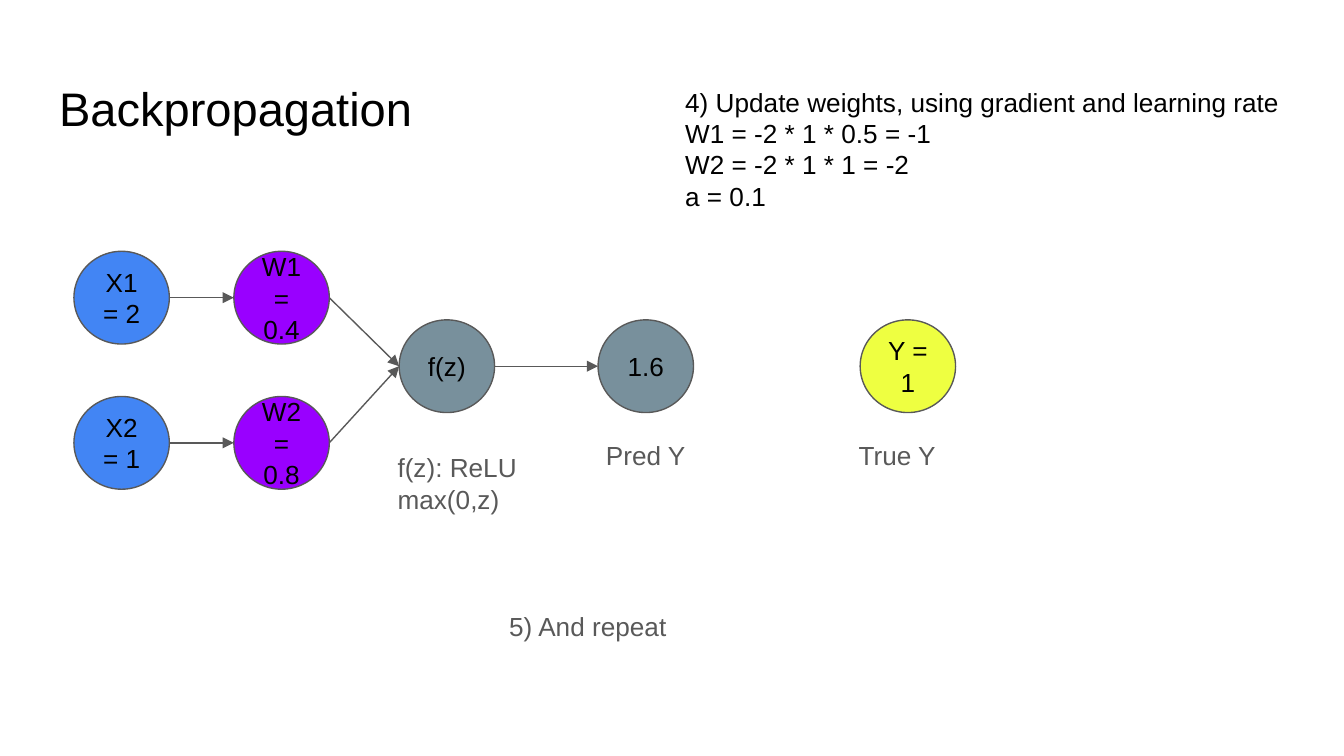
import pptx
import pptx.util
import pptx.dml.color
import pptx.enum.shapes
import pptx.enum.text
import pptx.oxml.ns
import lxml.etree

Inches = pptx.util.Inches
Pt = pptx.util.Pt
RGBColor = pptx.dml.color.RGBColor
PP_ALIGN = pptx.enum.text.PP_ALIGN
MSO_ANCHOR = pptx.enum.text.MSO_ANCHOR
MSO_AUTO_SIZE = pptx.enum.text.MSO_AUTO_SIZE

BLACK = RGBColor(0x00, 0x00, 0x00)
GRAY = RGBColor(0x59, 0x59, 0x59)
BLUE = RGBColor(0x42, 0x85, 0xF4)
PURPLE = RGBColor(0x99, 0x00, 0xFF)
SLATE = RGBColor(0x78, 0x90, 0x9C)
YELLOW = RGBColor(0xEE, 0xFF, 0x41)

NODE_W, NODE_H = 0.71, 0.69
TOP_ROW, MIDDLE_ROW, BOTTOM_ROW = 1.87, 2.38, 2.95
INPUT_X, WEIGHT_X, NEURON_X, PRED_X, TRUE_X = 0.55, 1.74, 2.97, 4.45, 6.4


def set_text(s, lines, color=BLACK, size=14, align=PP_ALIGN.LEFT,
             anchor=MSO_ANCHOR.TOP, auto_size=MSO_AUTO_SIZE.NONE):
    tf = s.text_frame
    frame_format = {
        "word_wrap": True,
        "auto_size": auto_size,
        "vertical_anchor": anchor,
        "margin_left": Inches(0.1),
        "margin_right": Inches(0.1),
        "margin_top": Inches(0.1),
        "margin_bottom": Inches(0.1),
    }
    for name, value in frame_format.items():
        setattr(tf, name, value)
    for i, line in enumerate(lines):
        p = tf.paragraphs[0] if i == 0 else tf.add_paragraph()
        p.alignment = align
        r = p.add_run()
        r.text = line
        for name, value in {"name": "Arial", "size": Pt(size)}.items():
            setattr(r.font, name, value)
        r.font.color.rgb = color


def set_line(line):
    line.color.rgb = GRAY
    line.width = Pt(0.75)


def add_title(slide, text):
    s = slide.shapes.title
    box = {"left": 0.34, "top": 0.49, "width": 9.32, "height": 0.63}
    for name, value in box.items():
        setattr(s, name, Inches(value))
    set_text(s, [text], size=25.2)


def add_node(slide, text, x, y, fill):
    s = slide.shapes.add_shape(
        pptx.enum.shapes.MSO_SHAPE.OVAL,
        Inches(x), Inches(y), Inches(NODE_W), Inches(NODE_H))
    s.shadow.inherit = False
    s.fill.solid()
    s.fill.fore_color.rgb = fill
    set_line(s.line)
    set_text(s, [text], align=PP_ALIGN.CENTER, anchor=MSO_ANCHOR.MIDDLE)
    return s


def add_arrow(slide, source, target):
    s = slide.shapes.add_connector(
        pptx.enum.shapes.MSO_CONNECTOR.STRAIGHT,
        source.left + source.width, source.top + source.height // 2,
        target.left, target.top + target.height // 2)
    set_line(s.line)
    qn = pptx.oxml.ns.qn
    properties = s.element.spPr
    lxml.etree.SubElement(properties.find(qn("a:ln")), qn("a:tailEnd"), type="triangle")
    lxml.etree.SubElement(properties, qn("a:effectLst"))


def add_label(slide, lines, x, y, w, h, color=GRAY):
    s = slide.shapes.add_textbox(Inches(x), Inches(y), Inches(w), Inches(h))
    set_text(s, lines, color, auto_size=MSO_AUTO_SIZE.SHAPE_TO_FIT_TEXT)


def main():
    prs = pptx.Presentation()
    prs.slide_width = Inches(10)
    prs.slide_height = prs.slide_width * 9 // 16
    slide = prs.slides.add_slide(prs.slide_layouts[5])
    add_title(slide, "Backpropagation")

    neuron = add_node(slide, "f(z)", NEURON_X, MIDDLE_ROW, SLATE)
    prediction = add_node(slide, "1.6", PRED_X, MIDDLE_ROW, SLATE)
    add_node(slide, "Y = 1", TRUE_X, MIDDLE_ROW, YELLOW)
    for x_text, w_text, y in (("X1 = 2", "W1 = 0.4", TOP_ROW),
                              ("X2 = 1", "W2 = 0.8", BOTTOM_ROW)):
        feature = add_node(slide, x_text, INPUT_X, y, BLUE)
        weight = add_node(slide, w_text, WEIGHT_X, y, PURPLE)
        add_arrow(slide, feature, weight)
        add_arrow(slide, weight, neuron)
    add_arrow(slide, neuron, prediction)

    add_label(slide, ["f(z): ReLU", "max(0,z)"], 2.86, 3.26, 1.17, 0.91)
    add_label(slide, ["Pred Y"], 4.41, 3.17, 0.81, 0.44)
    add_label(slide, ["True Y"], 6.29, 3.17, 1.17, 0.67)
    add_label(slide, ["4) Update weights, using gradient and learning rate",
                      "W1 = -2 * 1 * 0.5 = -1",
                      "W2 = -2 * 1 * 1 = -2",
                      "a = 0.1"], 5, 0.54, 4.97, 1.14, BLACK)
    add_label(slide, ["5) And repeat"], 3.69, 4.44, 3.28, 0.44)
    prs.save("out.pptx")


if __name__ == "__main__":
    main()
